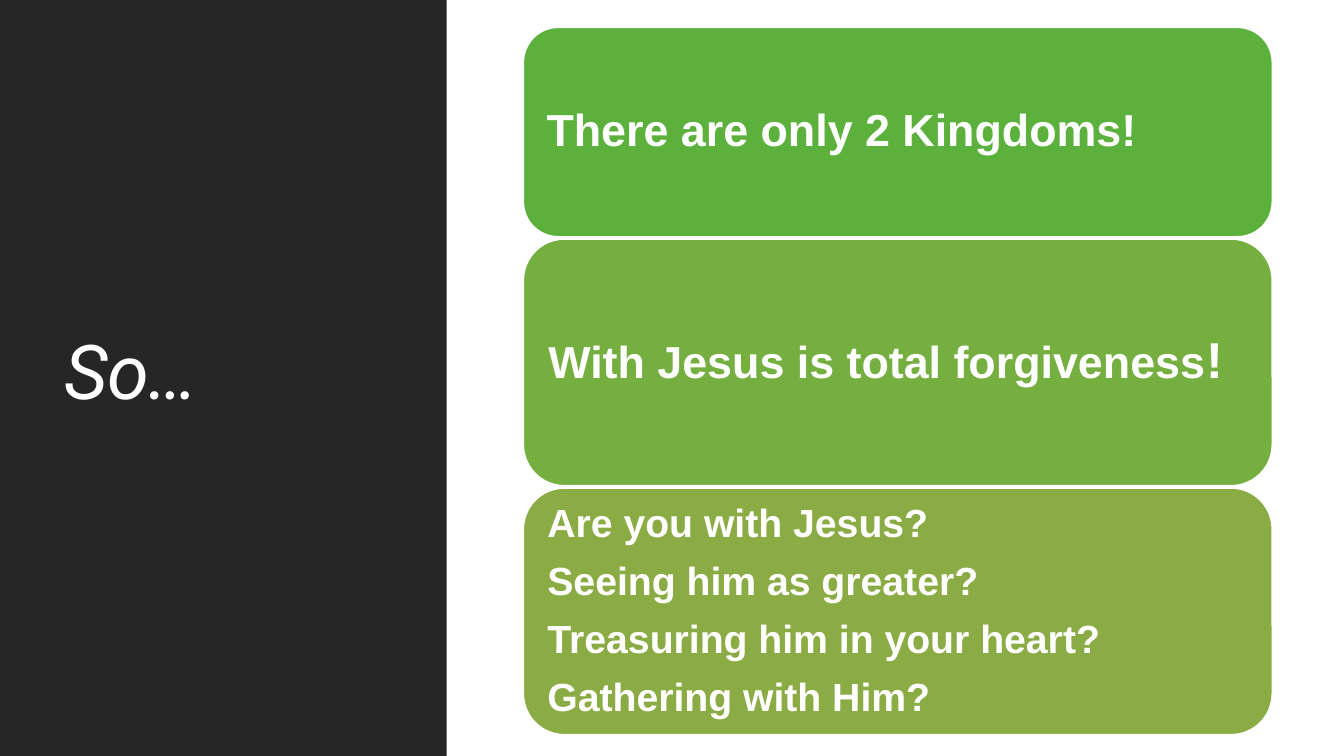
from pptx import Presentation
from pptx.dml.color import RGBColor
from pptx.enum import shapes, text
from pptx.util import Inches, Pt

WHITE = "FFFFFF"
DARK = "262626"
CARD_GAP = 0.02
CARDS = [
    # height, fill, inset, paragraphs of (text, size) runs
    (2.08, "5BB13B", 0.13, [[("There are only 2 Kingdoms!", 32)]]),
    (2.45, "74AF3F", 0.13, [[("With Jesus is total forgiveness", 32), ("!", 36)]]),
    (2.45, "8BAC44", 0.12, [[(question, 28)] for question in (
        "Are you with Jesus?",
        "Seeing him as greater?",
        "Treasuring him in your heart?",
        "Gathering with Him?",
    )]),
]


def rgb(color):
    return RGBColor.from_string(color)


def add_box(slide, kind, left, top, width, height, fill, line=None):
    sp = slide.shapes.add_shape(
        kind, Inches(left), Inches(top), Inches(width), Inches(height))
    sp.shadow.inherit = False
    sp.fill.solid()
    sp.fill.fore_color.rgb = rgb(fill)
    if line:
        sp.line.color.rgb = rgb(line)
        sp.line.width = Pt(1.25)
    else:
        sp.line.fill.background()
    return sp


def set_up_frame(sp, inset_x, inset_y):
    """Wrap the text, centre it vertically and set its margins."""
    tf = sp.text_frame
    tf.word_wrap = True
    tf.vertical_anchor = text.MSO_ANCHOR.MIDDLE
    tf.margin_left = tf.margin_right = Inches(inset_x)
    tf.margin_top = tf.margin_bottom = Inches(inset_y)
    return tf


def add_run(p, words, size, font="Arial", color=WHITE, bold=False,
            italic=False, spacing=None):
    r = p.add_run()
    r.text = words
    r.font.size = Pt(size)
    r.font.name = font
    r.font.color.rgb = rgb(color)
    r.font.bold = bold
    r.font.italic = italic
    if spacing is not None:
        r.font._element.set("spc", str(round(spacing * 100)))


def add_title_panel(slide, left, top, width, height):
    add_box(slide, shapes.MSO_SHAPE.RECTANGLE, left, top, width, height, DARK)
    title = slide.shapes.add_textbox(
        Inches(left + 0.54), Inches(top + 0.57),
        Inches(width - 1.06), Inches(height - 1.19))
    p = set_up_frame(title, 0.1, 0.05).paragraphs[0]
    p.line_spacing = 0.9
    add_run(p, "So…", 54, font="Roboto", italic=True, spacing=-0.5)


def add_cards(slide, left, top, width):
    """Stack the rounded cards downwards from the given corner."""
    for height, fill, inset, paragraphs in CARDS:
        card = add_box(slide, shapes.MSO_SHAPE.ROUNDED_RECTANGLE,
                       left, top, width, height, fill, line=WHITE)
        tf = set_up_frame(card, inset, inset)
        for i, runs in enumerate(paragraphs):
            p = tf.add_paragraph() if i else tf.paragraphs[0]
            p.alignment = text.PP_ALIGN.LEFT
            p.line_spacing = 0.9
            if i:
                p.space_before = Pt(11.2)
            for words, size in runs:
                add_run(p, words, size, bold=True)
        top += height + CARD_GAP


def main():
    prs = Presentation()
    prs.slide_width = Inches(13.33)
    prs.slide_height = Inches(7.5)
    slide = prs.slides.add_slide(prs.slide_layouts[6])
    slide.background.fill.solid()
    slide.background.fill.fore_color.rgb = rgb(WHITE)
    add_title_panel(slide, 0, 0, 4.43, 7.5)
    add_cards(slide, 5.19, 0.27, 7.43)
    prs.save("out.pptx")


if __name__ == "__main__":
    main()
